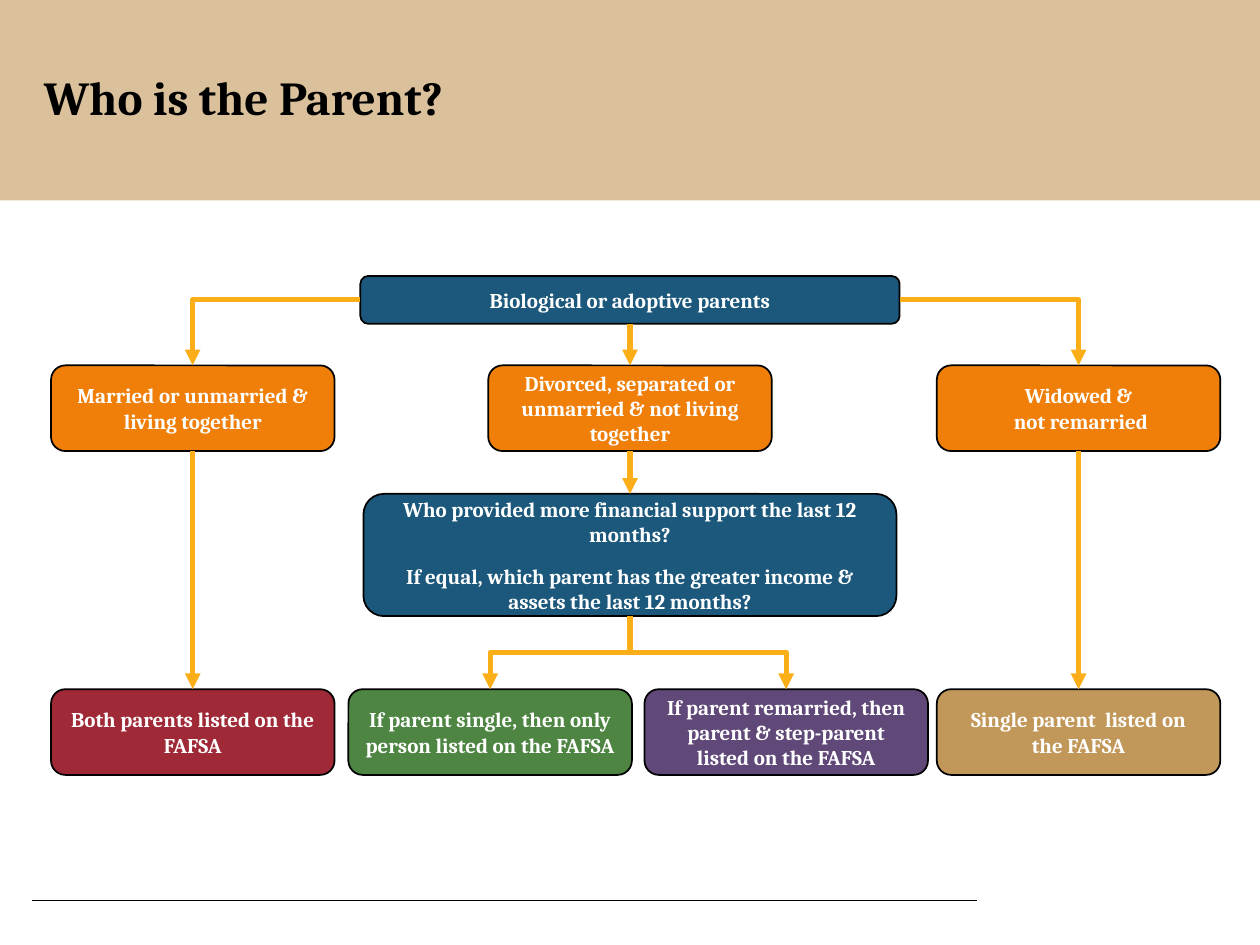
from lxml.etree import SubElement
from pptx import Presentation
from pptx.dml.color import RGBColor
from pptx.enum.shapes import MSO_CONNECTOR, MSO_SHAPE
from pptx.enum.text import MSO_ANCHOR, PP_ALIGN
from pptx.oxml.ns import qn
from pptx.util import Inches, Pt

WIDTH, HEIGHT = 10, 7.5
BLACK, WHITE, TAN, GOLD = "000000", "FFFFFF", "DAC19B", "FBAE17"
BLUE, ORANGE, RED = "1B587C", "F07F09", "9F2936"
GREEN, PURPLE, SAND = "4E8542", "604878", "C19859"
TOP, LEFT, BOTTOM, RIGHT = range(4)

# Centre of each column; top and height of each row
COLUMNS = {"married": 1.53, "single": 3.89, "middle": WIDTH / 2,
           "remarried": 6.24, "widowed": 8.56}
ROWS = {"start": (2.19, 0.38), "status": (2.9, 0.68),
        "support": (3.92, 0.97), "result": (5.47, 0.68)}


def color(value):
    return RGBColor.from_string(value)


def write_text(shape, lines, size, ink, align=PP_ALIGN.LEFT, gap=0, spacing=None):
    frame = shape.text_frame
    frame.word_wrap = True
    frame.vertical_anchor = MSO_ANCHOR.MIDDLE
    for index, line in enumerate(lines):
        para = frame.paragraphs[0] if index == 0 else frame.add_paragraph()
        para.alignment = align
        para.line_spacing = spacing
        if index:
            para.space_before = Pt(gap)
        span = para.add_run()
        span.text = line
        span.font.name = "Cambria"
        span.font.size = Pt(size)
        span.font.bold = True
        span.font.color.rgb = color(ink)


def add_block(page, kind, left, top, width, height, fill, outline=None):
    block = page.shapes.add_shape(
        kind, Inches(left), Inches(top), Inches(width), Inches(height))
    block.shadow.inherit = False
    block.fill.solid()
    block.fill.fore_color.rgb = color(fill)
    if outline:
        block.line.color.rgb = color(outline)
        block.line.width = Pt(1)
    else:
        block.line.fill.background()
    return block


def add_box(page, column, row, fill, *lines, width=2.25, gap=0):
    """Place a rounded flowchart box centred on its column."""
    top, height = ROWS[row]
    box = add_block(page, MSO_SHAPE.ROUNDED_RECTANGLE, COLUMNS[column] - width / 2,
                    top, width, height, fill, BLACK)
    write_text(box, lines, 12, WHITE, PP_ALIGN.CENTER, gap)
    return box


def style_line(connector, ink, weight, arrow=False):
    connector.line.color.rgb = color(ink)
    connector.line.width = Pt(weight)
    if arrow:
        SubElement(connector.line._get_or_add_ln(), qn("a:tailEnd"), type="triangle")
    SubElement(connector._element.spPr, qn("a:effectLst"))


def join(page, start, start_side, end, kind=MSO_CONNECTOR.STRAIGHT):
    """Draw an arrow from a side of one box to the top of another."""
    connector = page.shapes.add_connector(kind, 0, 0, 0, 0)
    connector.begin_connect(start, start_side)
    connector.end_connect(end, TOP)
    style_line(connector, GOLD, 3, arrow=True)
    return connector


def join_corner(page, start, start_side, end):
    """Go sideways from the start box, then down: a single bend."""
    connector = join(page, start, start_side, end, MSO_CONNECTOR.ELBOW)
    connector._element.spPr.find(qn("a:prstGeom")).set("prst", "bentConnector2")


def join_branch(page, start, end):
    """Go down, across and down again: an elbow turned by a quarter."""
    connector = join(page, start, BOTTOM, end, MSO_CONNECTOR.ELBOW)
    begin_x, begin_y = connector.begin_x, connector.begin_y
    end_x, end_y = connector.end_x, connector.end_y
    drop, across = end_y - begin_y, abs(end_x - begin_x)
    connector.left = (begin_x + end_x - drop) // 2
    connector.top = (begin_y + end_y - across) // 2
    connector.width, connector.height = drop, across
    frame = connector._element.spPr.find(qn("a:xfrm"))
    goes_right = end_x > begin_x
    frame.set("rot", str((270 if goes_right else 90) * 60000))
    frame.set("flipH", "1" if goes_right else "0")
    frame.set("flipV", "0")


def add_header(page, height):
    add_block(page, MSO_SHAPE.RECTANGLE, 0, 0, WIDTH, height, TAN)
    title = page.shapes.add_textbox(
        Inches(0.25), Inches(0.25), Inches(7.76), Inches(height - 0.5))
    write_text(title, ["Who is the Parent?"], 27, BLACK, spacing=0.9)


def add_footer_rule(page, left, right, top):
    rule = page.shapes.add_connector(
        MSO_CONNECTOR.STRAIGHT, Inches(left), Inches(top), Inches(right), Inches(top))
    style_line(rule, BLACK, 0.5)


def add_flowchart(page):
    parents = add_box(page, "middle", "start", BLUE,
                      "Biological or adoptive parents", width=4.28)
    married = add_box(page, "married", "status", ORANGE,
                      "Married or unmarried & living together")
    divorced = add_box(page, "middle", "status", ORANGE,
                       "Divorced, separated or unmarried & not living together")
    widowed = add_box(page, "widowed", "status", ORANGE,
                      "Widowed &", " not remarried")
    support = add_box(page, "middle", "support", BLUE,
                      "Who provided more financial support the last 12 months?",
                      "If equal, which parent has the greater income & assets "
                      "the last 12 months?", width=4.23, gap=9.4)
    both = add_box(page, "married", "result", RED, "Both parents listed on the FAFSA")
    single = add_box(page, "single", "result", GREEN,
                     "If parent single, then only person listed on the FAFSA")
    remarried = add_box(page, "remarried", "result", PURPLE,
                        "If parent remarried, then parent & step-parent "
                        "listed on the FAFSA")
    survivor = add_box(page, "widowed", "result", SAND,
                       "Single parent  listed on the FAFSA")

    join_corner(page, parents, LEFT, married)
    join_corner(page, parents, RIGHT, widowed)
    for start, end in ((parents, divorced), (married, both),
                       (widowed, survivor), (divorced, support)):
        join(page, start, BOTTOM, end)
    for end in (single, remarried):
        join_branch(page, support, end)


def main():
    deck = Presentation()
    deck.slide_width, deck.slide_height = Inches(WIDTH), Inches(HEIGHT)
    page = deck.slides.add_slide(deck.slide_layouts[6])
    add_header(page, 1.59)
    add_footer_rule(page, 0.25, 7.75, 7.15)
    add_flowchart(page)
    deck.save("out.pptx")


if __name__ == "__main__":
    main()
